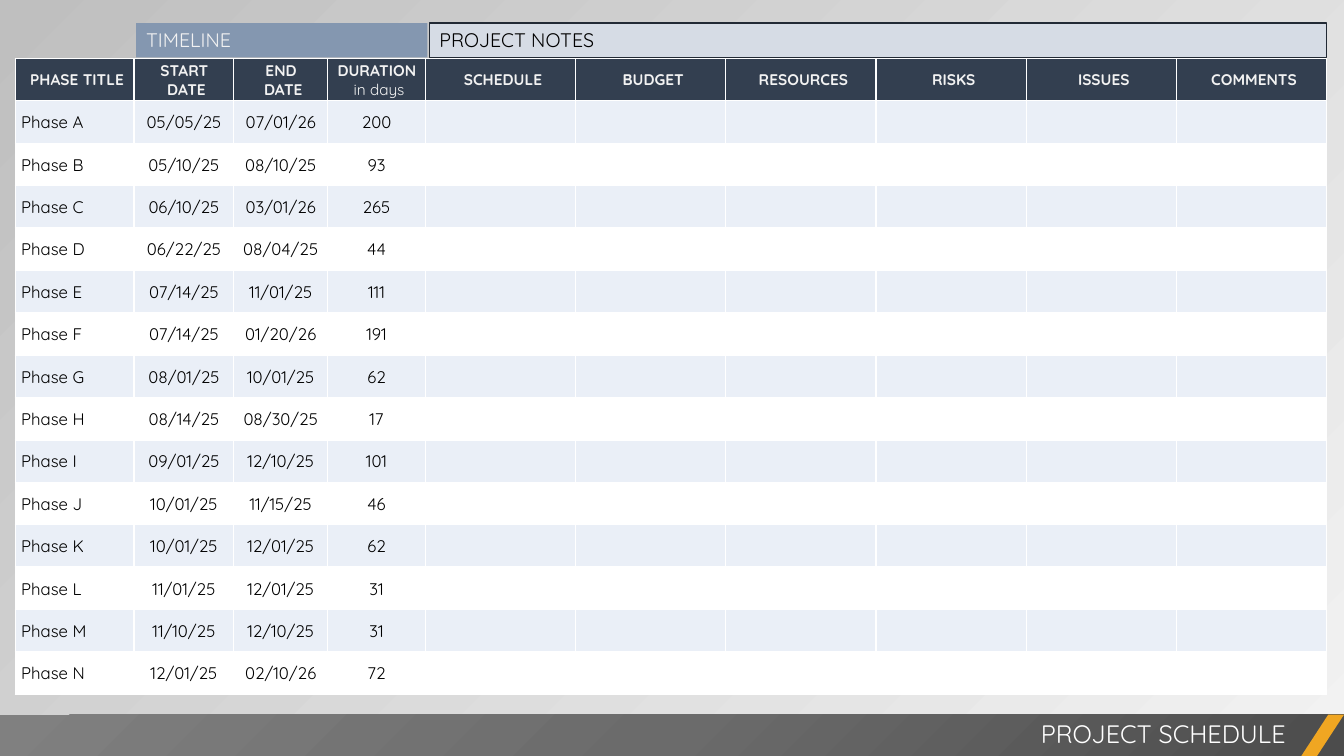
from lxml import etree
from pptx import Presentation
from pptx import util as u
from pptx.dml.color import RGBColor
from pptx.enum import shapes, text
from pptx.oxml.ns import qn

FONT = "Quicksand"
COLORS = {
    "white": "FFFFFF", "light": "F2F2F2", "black": "000000",
    "bg_dark": "BFBFBF", "bar_dark": "4C4C4C", "bar_mid": "6B6B6B",
    "bar_light": "808080", "accent": "F0A622", "header": "333F50",
    "band": "EAEFF7", "timeline": "8497B0", "notes": "D6DCE5",
    "notes_line": "222A35",
}
TIME_WIDTHS = [1.18, 0.99, 0.93, 0.97]
NOTE_WIDTH = 1.49
NOTES = ["SCHEDULE", "BUDGET", "RESOURCES", "RISKS", "ISSUES", "COMMENTS"]
HEADERS = [
    [("PHASE TITLE", True)],
    [("START ", True), ("DATE", True)],
    [("END ", True), ("DATE", True)],
    [("DURATION ", True), ("in days", False)],
] + [[(note, True)] for note in NOTES]
PHASES = [
    ("Phase A", "05/05/25", "07/01/26", "200"),
    ("Phase B", "05/10/25", "08/10/25", "93"),
    ("Phase C", "06/10/25", "03/01/26", "265"),
    ("Phase D", "06/22/25", "08/04/25", "44"),
    ("Phase E", "07/14/25", "11/01/25", "111"),
    ("Phase F", "07/14/25", "01/20/26", "191"),
    ("Phase G", "08/01/25", "10/01/25", "62"),
    ("Phase H", "08/14/25", "08/30/25", "17"),
    ("Phase I", "09/01/25", "12/10/25", "101"),
    ("Phase J", "10/01/25", "11/15/25", "46"),
    ("Phase K", "10/01/25", "12/01/25", "62"),
    ("Phase L", "11/01/25", "12/01/25", "31"),
    ("Phase M", "11/10/25", "12/10/25", "31"),
    ("Phase N", "12/01/25", "02/10/26", "72"),
]


def rgb(name):
    return RGBColor.from_string(COLORS[name])


def inches(*values):
    return [u.Inches(v) for v in values]


def add_run(p, content, size, color, bold=False):
    r = p.add_run()
    r.text = content
    r.font.name = FONT
    r.font.size = u.Pt(size)
    r.font.bold = bold
    r.font.color.rgb = rgb(color)


def add_solid(parent, color, alpha=None):
    clr = etree.SubElement(parent, qn("a:srgbClr"), val=COLORS[color])
    if alpha is not None:
        etree.SubElement(clr, qn("a:alpha"), val=str(alpha * 1000))


def set_gradient(fill, element, stops, angle=None):
    fill.gradient()
    grad = element.find(".//" + qn("a:gradFill"))
    for child in list(grad):
        grad.remove(child)
    gs_list = etree.SubElement(grad, qn("a:gsLst"))
    for pos, color, alpha in stops:
        gs = etree.SubElement(gs_list, qn("a:gs"), pos=str(pos * 1000))
        add_solid(gs, color, alpha)
    if angle is not None:
        etree.SubElement(grad, qn("a:lin"), ang=str(angle * 60000), scaled="0")
    else:
        circle = etree.SubElement(grad, qn("a:path"), path="circle")
        etree.SubElement(circle, qn("a:fillToRect"), l="100000", t="100000")


def add_block(s, kind, box, fill=None, line=None):
    sp = s.shapes.add_shape(kind, *inches(*box))
    sp.shadow.inherit = False
    if fill:
        sp.fill.solid()
        sp.fill.fore_color.rgb = rgb(fill)
    if line:
        sp.line.color.rgb = rgb(line)
        sp.line.width = u.Pt(1)
    else:
        sp.line.fill.background()
    return sp


def write_line(sp, content, size, color, align):
    tf = sp.text_frame
    tf.word_wrap = True
    tf.auto_size = text.MSO_AUTO_SIZE.SHAPE_TO_FIT_TEXT
    tf.vertical_anchor = text.MSO_ANCHOR.TOP
    p = tf.paragraphs[0]
    p.alignment = align
    add_run(p, content, size, color)


def add_footer(s, box):
    left, top, width, height = box
    bar = add_block(s, shapes.MSO_SHAPE.RECTANGLE, box)
    set_gradient(bar.fill, bar.element, [
        (0, "bar_dark", None), (50, "bar_mid", None), (100, "bar_light", None)])
    slash_box = (left + width - 0.43, top, 0.43, height)
    slash = add_block(s, shapes.MSO_SHAPE.PARALLELOGRAM, slash_box, "accent")
    slash.adjustments[0] = 0.652
    title = s.shapes.add_textbox(*inches(left + width - 8.08, top - 0.01, 7.6, 0.4))
    write_line(title, "PROJECT SCHEDULE", 18, "white", text.PP_ALIGN.RIGHT)


def format_cell(cell, fill, left_margin):
    tc_pr = cell._tc.get_or_add_tcPr()
    for side in ("lnL", "lnR", "lnT", "lnB"):
        ln = etree.SubElement(tc_pr, qn("a:" + side), w=str(u.Pt(1)))
        add_solid(etree.SubElement(ln, qn("a:solidFill")), "white")
    cell.fill.solid()
    cell.fill.fore_color.rgb = rgb(fill)
    cell.vertical_anchor = text.MSO_ANCHOR.MIDDLE
    cell.margin_left, cell.margin_top, cell.margin_right, cell.margin_bottom = inches(
        left_margin, 0.01, 0.01, 0)


def add_schedule(s, box):
    widths = TIME_WIDTHS + [NOTE_WIDTH] * len(NOTES)
    table = s.shapes.add_table(
        len(PHASES) + 1, len(widths), *inches(*box)).table
    for col, (width, lines) in enumerate(zip(widths, HEADERS)):
        table.columns[col].width = u.Inches(width)
        cell = table.cell(0, col)
        format_cell(cell, "header", 0.06)
        p = cell.text_frame.paragraphs[0]
        p.alignment = text.PP_ALIGN.CENTER
        for i, (content, bold) in enumerate(lines):
            if i:
                p.add_line_break()
            add_run(p, content, 11, "light", bold)
    for row, phase in enumerate(PHASES, 1):
        for col in range(len(widths)):
            cell = table.cell(row, col)
            format_cell(cell, "band" if row % 2 else "white", 0.01 if col else 0.06)
            if col < len(phase):
                p = cell.text_frame.paragraphs[0]
                p.alignment = text.PP_ALIGN.CENTER if col else text.PP_ALIGN.LEFT
                add_run(p, phase[col], 12, "black")


def add_group_headings(s, box):
    left, top, width, height = box
    notes_left = left + 2.91
    headings = [
        ("TIMELINE", left, 2.89, "timeline", None, "light"),
        ("PROJECT NOTES", notes_left, left + width - notes_left,
         "notes", "notes_line", "black"),
    ]
    for content, x, w, fill, line, color in headings:
        sp = add_block(s, shapes.MSO_SHAPE.RECTANGLE, (x, top, w, height), fill, line)
        write_line(sp, content, 14, color, text.PP_ALIGN.LEFT)


def main():
    prs = Presentation()
    prs.slide_width, prs.slide_height = inches(13.33, 7.5)
    s = prs.slides.add_slide(prs.slide_layouts[6])
    set_gradient(s.background.fill, s.element,
                 [(0, "light", 40), (100, "bg_dark", None)], 225)
    add_footer(s, (0, 7.09, 13.33, 0.42))
    add_schedule(s, (0.15, 0.58, 13, 6.31))
    add_group_headings(s, (1.35, 0.23, 11.81, 0.34))
    prs.save("out.pptx")


if __name__ == "__main__":
    main()
